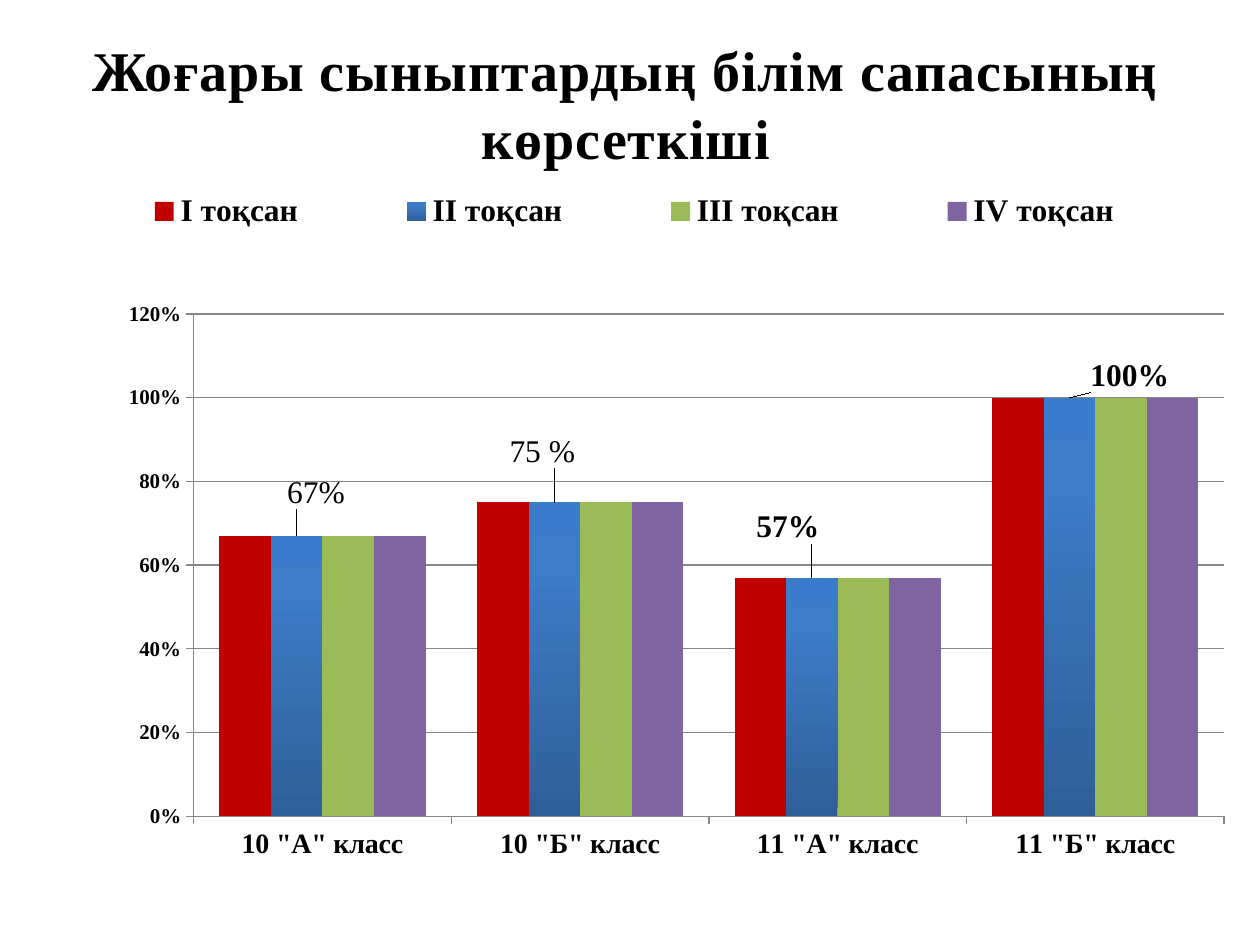
from copy import deepcopy

from lxml import etree
from pptx import Presentation
from pptx.chart.data import CategoryChartData
from pptx.dml.color import RGBColor
from pptx.enum.chart import XL_CHART_TYPE, XL_LABEL_POSITION, XL_LEGEND_POSITION, XL_TICK_MARK
from pptx.enum.text import MSO_ANCHOR, PP_ALIGN
from pptx.oxml.ns import qn
from pptx.util import Cm, Pt

COLUMN = XL_CHART_TYPE.COLUMN_CLUSTERED
RIGHT = XL_LEGEND_POSITION.RIGHT
ABOVE = XL_LABEL_POSITION.OUTSIDE_END
OUT = XL_TICK_MARK.OUTSIDE
MIDDLE = MSO_ANCHOR.MIDDLE
CENTER = PP_ALIGN.CENTER

COLORS = {"text": "000000", "line": "868686", "red": "C00000", "green": "9BBB59",
          "purple": "8064A2", "deep": "2F5F99", "blue": "3D7CC7", "light": "3A7CCB"}
TITLE = "Жоғары сыныптардың білім сапасының көрсеткіші"
GRADES = ['10 "А" класс', '10 "Б" класс', '11 "А" класс', '11 "Б" класс']
TERMS = {"I тоқсан": ["red"], "II тоқсан": ["deep", "blue", "light"],
         "III тоқсан": ["green"], "IV тоқсан": ["purple"]}
SCORES = [0.67, 0.75, 0.57, 1]
STOPS = [0, 0.8, 1]
LABELS = [("67%", 0.016, -0.03), ("75 %", -0.01, -0.04), (None, -0.02, -0.04), (None, 0.05, 0)]


def color(name):
    return RGBColor.from_string(COLORS[name])


def layout(**parts):
    node = etree.Element(qn("c:layout"))
    manual = etree.SubElement(node, qn("c:manualLayout"))
    for tag, val in parts.items():
        etree.SubElement(manual, qn("c:" + tag)).set("val", str(val))
    return node


class Deck:
    """Holds the style and the current slide, and draws each kind of element."""

    def __init__(self):
        self.deck = Presentation()
        self.deck.slide_width, self.deck.slide_height = Cm(25.4), Cm(19.05)
        self.face = "Times New Roman"
        self.slide = self.deck.slides.add_slide(self.deck.slide_layouts[5])

    def style(self, font, size, bold=True):
        font.name, font.size, font.bold = self.face, Pt(size), bold
        font.color.rgb = color("text")

    def title(self, text, left, top, width, height):
        shape = self.slide.shapes.title
        shape.left, shape.top, shape.width, shape.height = left, top, width, height
        frame = shape.text_frame
        frame.text = text
        frame.word_wrap = True
        frame.vertical_anchor = MIDDLE
        frame.paragraphs[0].alignment = CENTER
        run = frame.paragraphs[0].runs[0]
        self.style(run.font, 32)
        run.font._element.set("spc", "50")

    def axis(self, axis, size):
        self.style(axis.tick_labels.font, size)
        axis.major_tick_mark = OUT
        axis.format.line.color.rgb = color("line")

    def paint(self, bars, names):
        fill = bars.format.fill
        if len(names) == 1:
            fill.solid()
            fill.fore_color.rgb = color(names[0])
            return
        fill.gradient()
        fill.gradient_angle = 90
        stops = bars._element.xpath(".//a:gsLst")[0]
        stops.append(deepcopy(stops[-1]))
        for stop, name, place in zip(fill.gradient_stops, names, STOPS):
            stop.color.rgb = color(name)
            stop.position = place

    def labels(self, bars):
        group = bars.data_labels
        group.show_value = True
        group.number_format, group.number_format_is_linked = "0%", False
        self.style(group.font, 18)
        for i, (text, x, y) in enumerate(LABELS):
            label = bars.points[i].data_label
            label.position = ABOVE
            if text:
                label.text_frame.text = text
                self.style(label.text_frame.paragraphs[0].runs[0].font, 18, False)
            else:
                self.style(label.font, 18)
            node = bars._element.xpath(f'c:dLbls/c:dLbl[c:idx/@val="{i}"]')[0]
            node.insert(1, layout(x=x, y=y))

    def legend(self, chart):
        chart.has_legend = True
        legend = chart.legend
        legend.position, legend.include_in_layout = RIGHT, False
        self.style(legend.font, 18)
        node = legend._element
        for old in node.findall(qn("c:layout")):
            node.remove(old)
        node.find(qn("c:legendPos")).addnext(
            layout(xMode="edge", yMode="edge", x=0.03, y=0, w=0.96, h=0.07))

    def chart(self, left, top, width, height):
        data = CategoryChartData(number_format="0%")
        data.categories = GRADES
        for term in TERMS:
            data.add_series(term, SCORES)
        chart = self.slide.shapes.add_chart(COLUMN, left, top, width, height, data).chart
        chart.has_title = False
        chart.font.name, chart.font.size = "Calibri", Pt(18)
        chart.font.color.rgb = color("text")
        self.axis(chart.category_axis, 16)
        value = chart.value_axis
        self.axis(value, 12)
        value.minimum_scale, value.maximum_scale, value.major_unit = 0, 1.2, 0.2
        value.tick_labels.number_format = "0%"
        value.tick_labels.number_format_is_linked = False
        value.major_gridlines.format.line.color.rgb = color("line")
        plot = chart.plots[0]
        plot.gap_width, plot.overlap, plot.vary_by_categories = 100, 0, False
        for bars, names in zip(plot.series, TERMS.values()):
            self.paint(bars, names)
        self.labels(plot.series[1])
        self.legend(chart)
        area = chart._chartSpace.chart.plotArea
        for old in area.findall(qn("c:layout")):
            area.remove(old)
        area.insert(0, layout(layoutTarget="inner", xMode="edge", yMode="edge",
                              x=0.144, y=0.179, w=0.856, h=0.706))


def main():
    deck = Deck()
    deck.title(TITLE, Cm(0.58), Cm(0.58), Cm(24.08), Cm(3))
    deck.chart(Cm(0.41), Cm(3.76), Cm(24.28), Cm(14.35))
    deck.deck.save("out.pptx")


if __name__ == "__main__":
    main()
